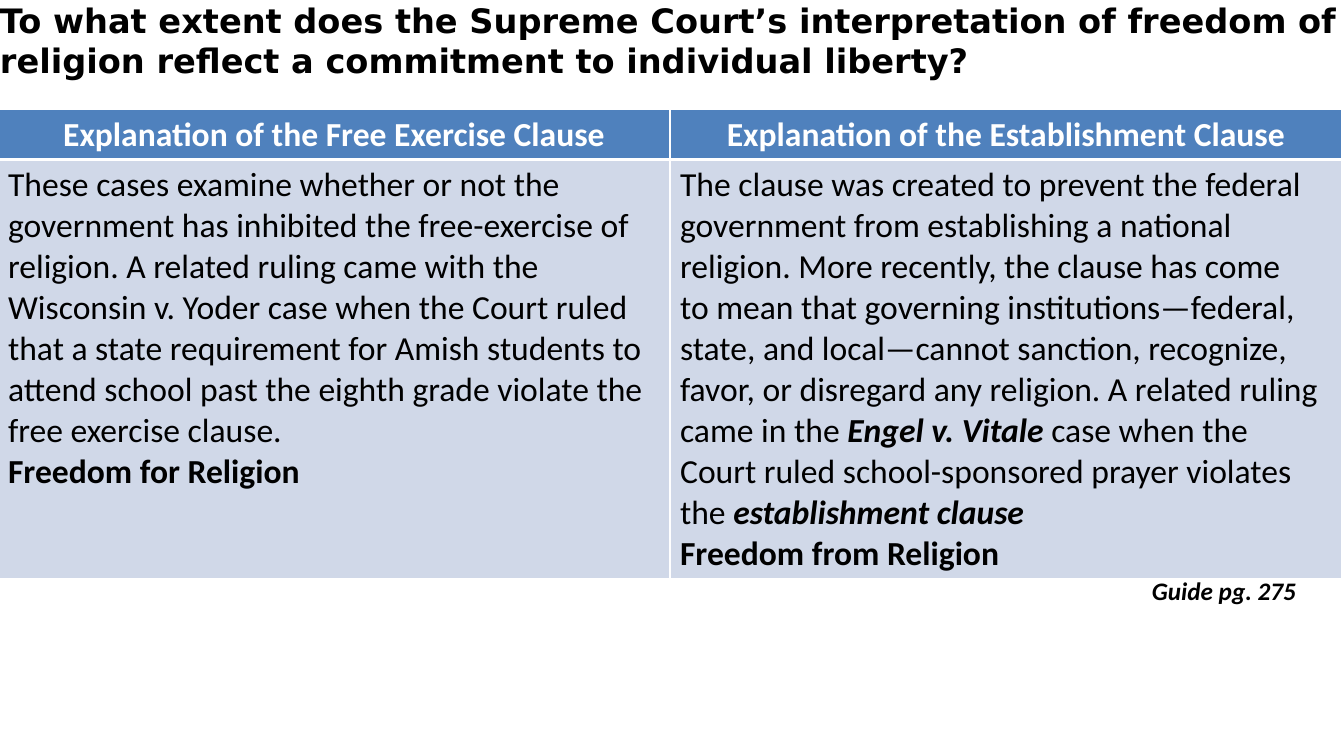
from pptx import Presentation
from pptx import util as u
from pptx.dml import color
from pptx.enum import text
from pptx.oxml import parse_xml
from pptx.oxml import ns

COLORS = {"ink": "000000", "white": "FFFFFF", "header": "4F81BD", "body": "D0D8E8"}

TITLE = ("To what extent does the Supreme Court’s interpretation of freedom of "
         "religion reflect a commitment to individual liberty?")
HEADERS = ["Explanation of the Free Exercise Clause",
           "Explanation of the Establishment Clause"]
FREE_EXERCISE = [
    [("These cases examine whether or not the government has inhibited the "
      "free-exercise of religion. A related ruling came with the Wisconsin v. Yoder "
      "case when the Court ruled that a state requirement for Amish students to "
      "attend school past the eighth grade violate the free exercise clause.", "")],
    [("Freedom for Religion", "b")],
]
ESTABLISHMENT = [
    [("The clause was created to prevent the federal", "")],
    [("government from establishing a national", "")],
    [("religion. More recently, the clause has come", "")],
    [("to mean that governing institutions—federal,", "")],
    [("state, and local—cannot sanction, recognize,", "")],
    [("favor, or disregard any religion. A related ruling", "")],
    [("came in the ", ""), ("Engel v. Vitale ", "bi"), ("case when the", "")],
    [("Court ruled school-sponsored prayer violates", "")],
    [("the ", ""), ("establishment clause", "bi")],
    [("Freedom from Religion", "b")],
]


def write(tf, paragraphs, ink="ink", size=24, font="Calibri", align=None):
    """Fill a text frame with paragraphs of (wording, style) runs."""
    for i, runs in enumerate(paragraphs):
        p = tf.paragraphs[0] if i == 0 else tf.add_paragraph()
        p.alignment = align
        for wording, style in runs:
            r = p.add_run()
            r.text = wording
            r.font.name = font
            r.font.size = u.Pt(size)
            r.font.bold = "b" in style
            r.font.italic = "i" in style
            r.font.color.rgb = color.RGBColor.from_string(COLORS[ink])


def style_cell(cell, fill, bottom):
    """Set the fill of a cell and its white borders."""
    cell.fill.solid()
    cell.fill.fore_color.rgb = color.RGBColor.from_string(COLORS[fill])
    tc_pr = cell._tc.get_or_add_tcPr()
    for i, (side, width) in enumerate(zip("LRTB", (1, 1, 1, bottom))):
        tc_pr.insert(i, parse_xml(
            f'<a:ln{side} {ns.nsdecls("a")} w="{u.Pt(width)}"><a:solidFill>'
            f'<a:srgbClr val="{COLORS["white"]}"/></a:solidFill></a:ln{side}>'))


def add_title(s, left, top, width, height):
    """Place the question across the top of the slide."""
    tf = s.shapes.add_textbox(left, top, width, height).text_frame
    tf.word_wrap = True
    tf.margin_left = tf.margin_right = tf.margin_top = tf.margin_bottom = 0
    write(tf, [[(TITLE, "b")]], font="DejaVu Sans")


def add_clauses(s, left, top, width, height):
    """Place the table that compares the two clauses."""
    table = s.shapes.add_table(2, 2, left, top, width, height).table
    table.rows[0].height = u.Cm(1.25)
    table.rows[1].height = height - table.rows[0].height
    for col, (header, body) in enumerate(zip(HEADERS, (FREE_EXERCISE, ESTABLISHMENT))):
        head_cell, body_cell = table.cell(0, col), table.cell(1, col)
        write(head_cell.text_frame, [[(header, "b")]], ink="white",
              align=text.PP_ALIGN.CENTER)
        write(body_cell.text_frame, body)
        style_cell(head_cell, "header", 3)
        style_cell(body_cell, "body", 1)


def add_reference(s, left, top, width, height):
    """Place the page reference under the table."""
    tf = s.shapes.add_textbox(left, top, width, height).text_frame
    tf.word_wrap = False
    write(tf, [[("Guide pg. 275", "bi")]], size=18)


def main():
    """Build the slide and save it."""
    prs = Presentation()
    prs.slide_width, prs.slide_height = u.Cm(33.87), u.Cm(19.05)
    s = prs.slides.add_slide(prs.slide_layouts[6])
    add_title(s, 0, 0, u.Cm(33.83), u.Cm(2.06))
    add_clauses(s, u.Cm(-0.05), u.Cm(2.75), u.Cm(33.87), u.Cm(11.8))
    add_reference(s, u.Cm(28.78), u.Cm(14.38), u.Cm(4.62), u.Cm(1.02))
    prs.save("out.pptx")


if __name__ == "__main__":
    main()
